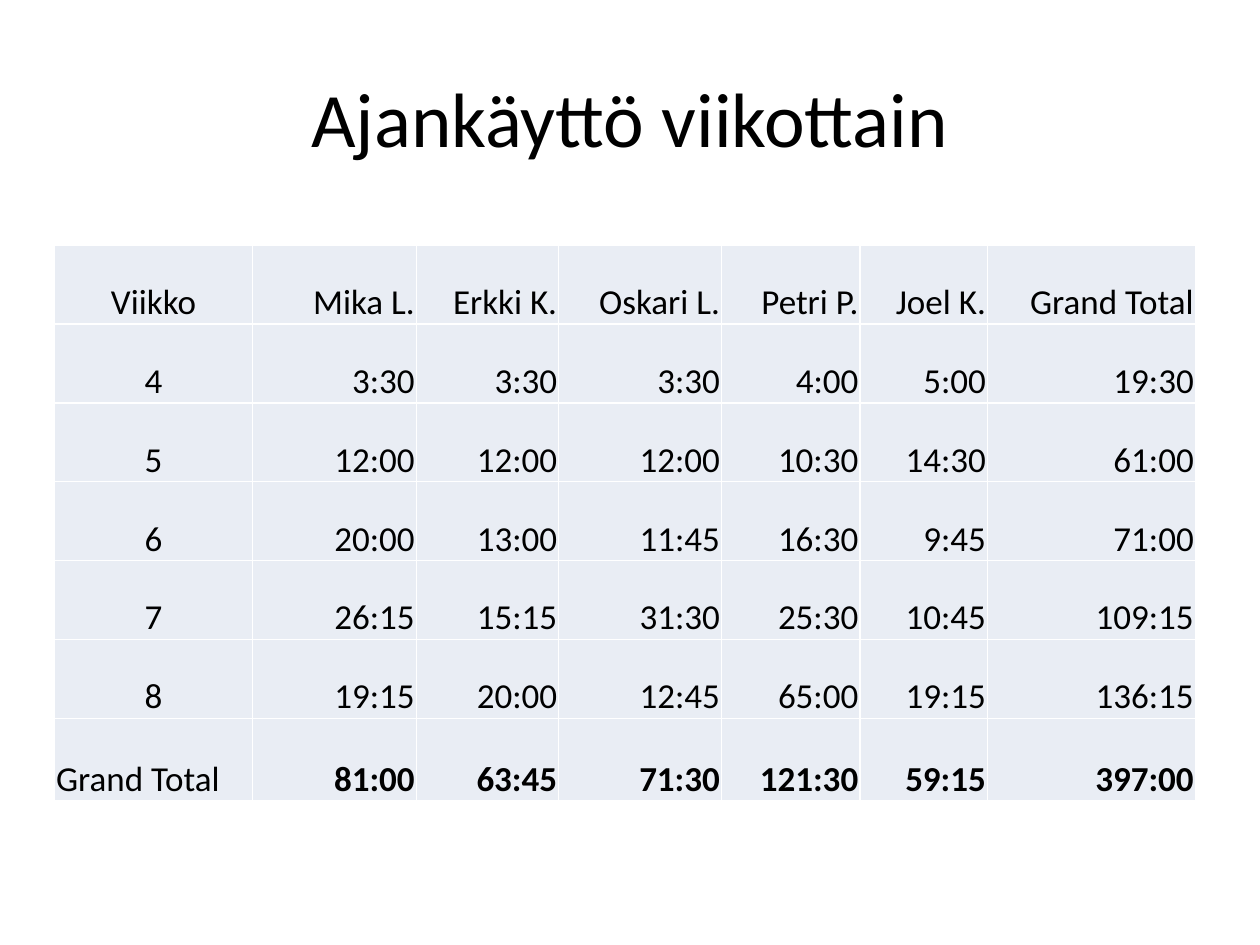
import lxml.etree
import pptx
import pptx.dml.color
import pptx.enum.text
import pptx.oxml.ns
import pptx.util

Cm = pptx.util.Cm
ALIGN = pptx.enum.text.PP_ALIGN
ANCHOR = pptx.enum.text.MSO_ANCHOR

HOURS = [
    ["Viikko", "Mika L.", "Erkki K.", "Oskari L.", "Petri P.", "Joel K.", "Grand Total"],
    ["4", "3:30", "3:30", "3:30", "4:00", "5:00", "19:30"],
    ["5", "12:00", "12:00", "12:00", "10:30", "14:30", "61:00"],
    ["6", "20:00", "13:00", "11:45", "16:30", "9:45", "71:00"],
    ["7", "26:15", "15:15", "31:30", "25:30", "10:45", "109:15"],
    ["8", "19:15", "20:00", "12:45", "65:00", "19:15", "136:15"],
    ["Grand Total", "81:00", "63:45", "71:30", "121:30", "59:15", "397:00"],
]
COLUMN_WIDTHS = [3.99, 3.3, 2.87, 3.28, 2.79, 2.57, 4.19]
WEEK_HEIGHT = 1.59


def color(hex_value):
    """Return the colour for a hex string."""
    return pptx.dml.color.RGBColor.from_string(hex_value)


def write(frame, text, size=20, bold=False, align=ALIGN.RIGHT, ink="000000"):
    """Put one formatted paragraph into a text frame."""
    paragraph = frame.paragraphs[0]
    paragraph.alignment = align
    run = paragraph.add_run()
    run.text = text
    run.font.name = "Calibri"
    run.font.size = pptx.util.Pt(size)
    run.font.bold = bold
    run.font.color.rgb = color(ink)


def add_borders(cell, hex_value, points):
    """Draw the same solid border on all four sides of a cell."""
    properties = cell._tc.get_or_add_tcPr()
    for side in ("a:lnL", "a:lnR", "a:lnT", "a:lnB"):
        border = lxml.etree.SubElement(
            properties, pptx.oxml.ns.qn(side), w=str(pptx.util.Pt(points)))
        fill = lxml.etree.SubElement(border, pptx.oxml.ns.qn("a:solidFill"))
        lxml.etree.SubElement(fill, pptx.oxml.ns.qn("a:srgbClr"), val=hex_value)


def add_title(slide, left, top, width, height):
    """Place the slide title in its box."""
    title = slide.shapes.add_textbox(Cm(left), Cm(top), Cm(width), Cm(height))
    frame = title.text_frame
    frame.word_wrap = True
    frame.vertical_anchor = ANCHOR.MIDDLE
    write(frame, "Ajankäyttö viikottain", size=44, align=ALIGN.CENTER)


def fill_cell(cell, text, **text_format):
    """Style one table cell and write its text."""
    cell.vertical_anchor = ANCHOR.BOTTOM
    cell.margin_left = cell.margin_right = cell.margin_top = Cm(0.03)
    cell.margin_bottom = 0
    add_borders(cell, "FFFFFF", 1)
    cell.fill.solid()
    cell.fill.fore_color.rgb = color("E9EDF4")
    write(cell.text_frame, text, **text_format)


def add_hours_table(slide, left, top, width, height):
    """Place the table of weekly hours in its box."""
    total_row = len(HOURS) - 1
    table = slide.shapes.add_table(
        len(HOURS), len(COLUMN_WIDTHS), Cm(left), Cm(top), Cm(width), Cm(height)).table
    for column, share in zip(table.columns, COLUMN_WIDTHS):
        column.width = Cm(width * share / sum(COLUMN_WIDTHS))
    for row in table.rows:
        row.height = Cm(WEEK_HEIGHT)
    table.rows[total_row].height = Cm(height - total_row * WEEK_HEIGHT)
    for r, entries in enumerate(HOURS):
        for c, entry in enumerate(entries):
            if c > 0:
                align = ALIGN.RIGHT
            else:
                align = ALIGN.LEFT if r == total_row else ALIGN.CENTER
            fill_cell(table.cell(r, c), entry, align=align,
                      bold=r == total_row and c > 0)


def main():
    """Build and save the presentation."""
    presentation = pptx.Presentation()
    presentation.slide_width = Cm(25.4)
    presentation.slide_height = Cm(19.05)
    slide = presentation.slides.add_slide(presentation.slide_layouts[6])
    add_title(slide, 1.27, 0.76, 22.86, 3.18)
    add_hours_table(slide, 1.1, 4.94, 23, 11.2)
    presentation.save("out.pptx")


if __name__ == "__main__":
    main()
